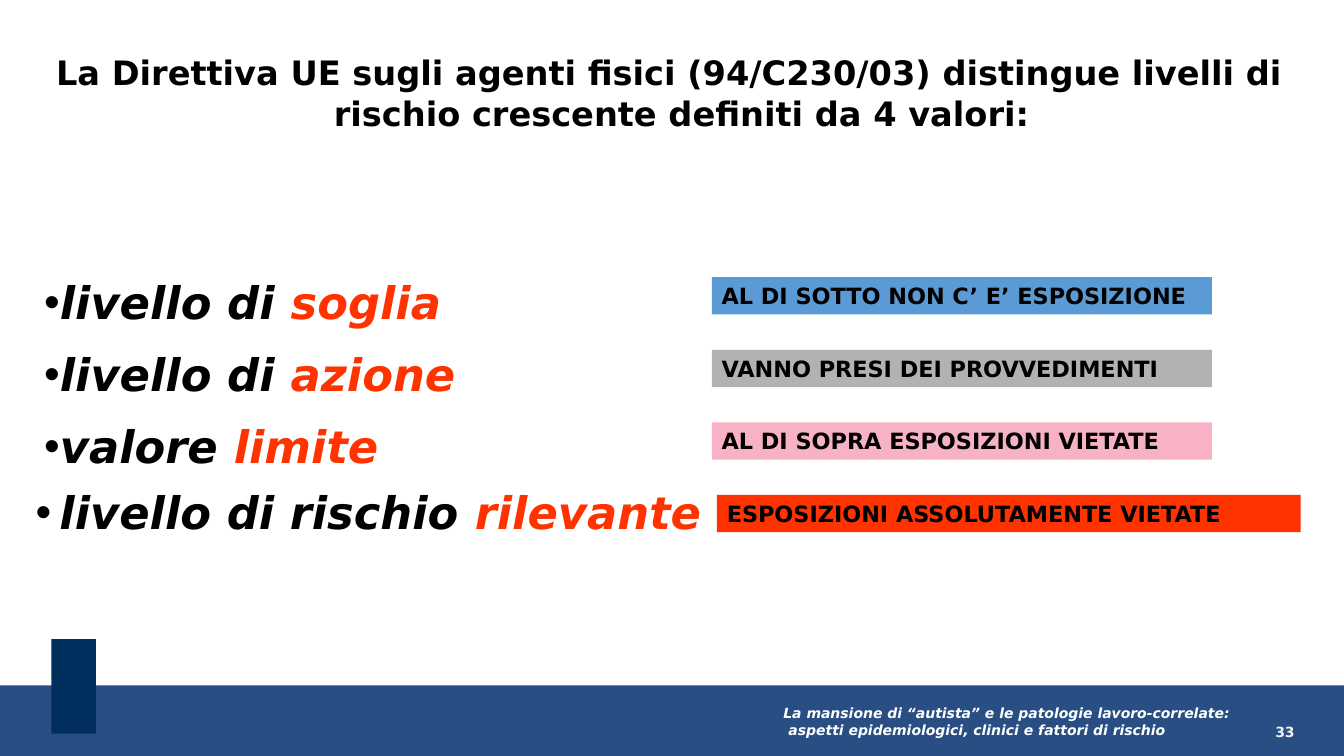
from dataclasses import dataclass, field

from lxml import etree
from pptx import Presentation
from pptx.dml.color import RGBColor
from pptx.enum.shapes import MSO_SHAPE
from pptx.enum.text import MSO_ANCHOR, PP_ALIGN
from pptx.oxml.ns import qn
from pptx.util import Inches, Pt

RECTANGLE = MSO_SHAPE.RECTANGLE
TOP = MSO_ANCHOR.TOP
LEFT, CENTER, RIGHT = PP_ALIGN.LEFT, PP_ALIGN.CENTER, PP_ALIGN.RIGHT


@dataclass(frozen=True)
class Theme:
    """Colours and type styles of the slide."""
    black: str = "000000"
    white: str = "FFFFFF"
    pale: str = "F2F2F2"
    band: str = "284E83"
    tab: str = "002E5D"
    alert: str = "FF3300"
    blue: str = "5B9BD5"
    gray: str = "B2B2B2"
    pink: str = "F8B2C6"
    bullet_font: str = "Arial"
    styles: dict = field(default_factory=lambda: {
        style: {"name": "DejaVu Sans", "size": Pt(size), "bold": True, "italic": italic}
        for style, size, italic in (
            ("title", 24, False), ("level", 32, True), ("label", 16, False),
            ("footer", 10, True), ("number", 10, False))
    })


class SlideBuilder:
    """Draws styled elements placed by percentages of the slide size."""

    def __init__(self, presentation, theme):
        self.width, self.height = presentation.slide_width, presentation.slide_height
        self.slide = presentation.slides.add_slide(presentation.slide_layouts[6])
        self.theme = theme

    def place(self, left, top, width, height):
        """Turns percentages into slide lengths."""
        return (int(self.width * left / 100), int(self.height * top / 100),
                int(self.width * width / 100), int(self.height * height / 100))

    def block(self, area, color):
        """Adds a plain filled rectangle."""
        block = self.slide.shapes.add_shape(RECTANGLE, *self.place(*area))
        block.shadow.inherit = False
        block.fill.solid()
        block.fill.fore_color.rgb = RGBColor.from_string(color)
        block.line.fill.background()
        return block

    def fill_text(self, frame, lines, style, align=LEFT, inset=True, bullet=False,
                  hanging=0, indents=(), line_spacing=None, gap=0):
        """Fills a frame with lines, each a list of text and colour pairs."""
        margins = {} if inset else dict.fromkeys(
            ("margin_left", "margin_right", "margin_top", "margin_bottom"), 0)
        for name, value in {"word_wrap": True, "vertical_anchor": TOP, **margins}.items():
            setattr(frame, name, value)
        for row, line in enumerate(lines):
            paragraph = frame.add_paragraph() if row else frame.paragraphs[0]
            properties = paragraph._p.get_or_add_pPr()
            if bullet:
                etree.SubElement(properties, qn("a:buFont"), typeface=self.theme.bullet_font)
                etree.SubElement(properties, qn("a:buChar"), char="•")
            if hanging:
                properties.set("marL", str(Inches(hanging)))
                properties.set("indent", str(-Inches(hanging)))
            if indents:
                properties.set("marL", str(Inches(indents[row])))
            spacing = {"alignment": align, "line_spacing": line_spacing,
                       "space_before": Pt(gap if row else 0)}
            for name, value in spacing.items():
                setattr(paragraph, name, value)
            for text, color in line:
                run = paragraph.add_run()
                run.text = text
                for name, value in self.theme.styles[style].items():
                    setattr(run.font, name, value)
                run.font.color.rgb = RGBColor.from_string(color)

    def text(self, area, lines, style, **layout):
        """Adds a text box."""
        box = self.slide.shapes.add_textbox(*self.place(*area))
        self.fill_text(box.text_frame, lines, style, **layout)

    def label(self, area, wording, color):
        """Adds a coloured bar with a caption."""
        bar = self.block(area, color)
        self.fill_text(bar.text_frame, [[(wording, self.theme.black)]], "label")


def main():
    """Builds and saves the slide."""
    presentation = Presentation()
    presentation.slide_width, presentation.slide_height = Inches(13.33), Inches(7.5)
    theme = Theme()
    builder = SlideBuilder(presentation, theme)

    builder.block((0, 90.67, 100, 9.33), theme.band)
    builder.block((3.83, 84.53, 3.3, 12.53), theme.tab)
    builder.text((93.4, 95.73, 2.93, 3.73), [[("33", theme.pale)]], "number",
                 align=RIGHT, inset=False)
    footer = ("La mansione di “autista” e le patologie lavoro-correlate:",
              "aspetti epidemiologici, clinici e fattori di rischio")
    builder.text((58.29, 93.2, 34.06, 3.07), [[(line, theme.white)] for line in footer],
                 "footer", inset=False, indents=(0, 0.05))

    title = ("La Direttiva UE sugli agenti fisici (94/C230/03) distingue "
             "livelli di rischio crescente definiti da 4 valori:")
    builder.text((3.23, 6.93, 93.1, 66), [[(title, theme.black)]], "title",
                 align=CENTER, inset=False, hanging=0.25)

    levels = [[(lead, theme.black), (key, theme.alert)] for lead, key in (
        ("livello di ", "soglia"), ("livello di ", "azione"),
        ("valore ", "limite"), ("livello di rischio ", "rilevante"))]
    builder.text((2.55, 34.67, 44.34, 28), levels[:3], "level",
                 bullet=True, line_spacing=1.14, gap=7.8)
    builder.text((1.5, 63.47, 52.44, 8.53), levels[3:], "level",
                 align=CENTER, bullet=True)

    effects = (
        ("AL DI SOTTO NON C’ E’ ESPOSIZIONE", theme.blue, 52.96, 37.21),
        ("VANNO PRESI DEI PROVVEDIMENTI", theme.gray, 52.96, 37.21),
        ("AL DI SOPRA ESPOSIZIONI VIETATE", theme.pink, 52.96, 37.21),
        ("ESPOSIZIONI ASSOLUTAMENTE VIETATE", theme.alert, 53.34, 43.44),
    )
    for row, (wording, color, left, width) in enumerate(effects):
        builder.label((left, 36.67 + 9.6 * row, width, 4.93), wording, color)

    presentation.save("out.pptx")


if __name__ == "__main__":
    main()
